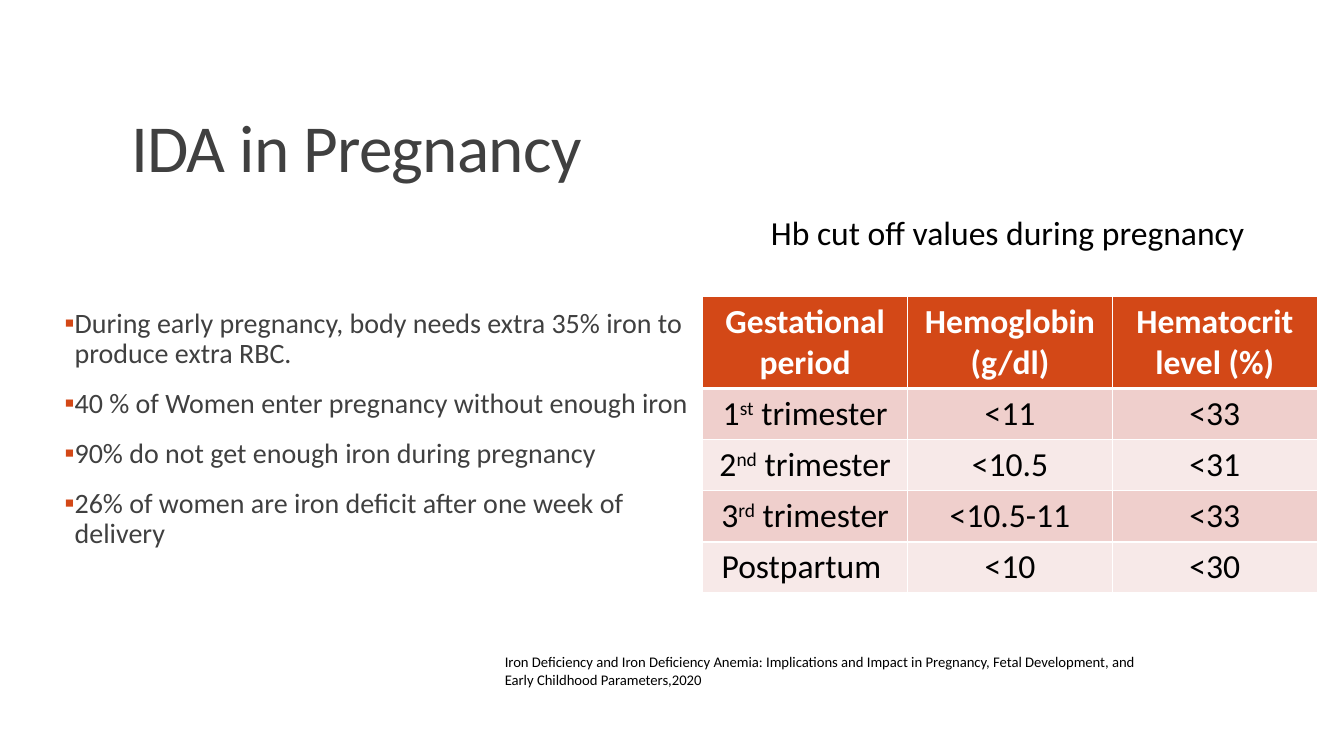
"""Build the slide on iron deficiency anemia in pregnancy."""
import pptx
import pptx.dml.color
import pptx.enum.text
import pptx.oxml.ns
import pptx.util
from dataclasses import dataclass
from lxml import etree

Pt = pptx.util.Pt
Align = pptx.enum.text.PP_ALIGN
Anchor = pptx.enum.text.MSO_ANCHOR
Fit = pptx.enum.text.MSO_AUTO_SIZE
qn = pptx.oxml.ns.qn


@dataclass(frozen=True)
class Theme:
    """Hold the colours, font and type sizes."""
    face: str = "Calibri"
    gray: str = "404040"
    black: str = "000000"
    white: str = "FFFFFF"
    rust: str = "D34817"
    rose: str = "EFCFCC"
    pale: str = "F7E9E8"
    title: float = 48
    table: float = 24
    list: float = 20
    note: float = 10.5


THEME = Theme()

POINTS = [
    "During early pregnancy, body needs extra 35% iron to produce extra RBC.",
    "40 % of Women enter pregnancy without enough iron",
    "90% do not get enough iron during pregnancy",
    "26% of women are iron deficit after one week of delivery",
]
HEAD = ["Gestational period", "Hemoglobin (g/dl)", "Hematocrit level (%)"]
LEVELS = [
    [("1", "st", " trimester"), "<11", "<33"],
    [("2", "nd", " trimester"), "<10.5", "<31"],
    [("3", "rd", " trimester"), "<10.5-11", "<33"],
    ["Postpartum ", "<10", "<30"],
]
SOURCE = ("Iron Deficiency and Iron Deficiency Anemia: Implications and Impact "
          "in Pregnancy, Fetal Development, and Early Childhood Parameters,2020")


def style(item, **vals):
    """Set each format value on the item."""
    for name, val in vals.items():
        setattr(item, name, val)


def place(shape, left, top, width, height):
    """Move and size a shape in points."""
    style(shape, left=Pt(left), top=Pt(top), width=Pt(width), height=Pt(height))


def write(para, text, size, color, bold=False):
    """Add a run of text to a paragraph and return it."""
    run = para.add_run()
    run.text = text
    style(run.font, name=THEME.face, size=Pt(size), bold=bold)
    run.font.color.rgb = pptx.dml.color.RGBColor.from_string(color)
    return run


def paint(parent, color):
    """Add a solid fill element to an XML parent."""
    fill = etree.SubElement(parent, qn("a:solidFill"))
    etree.SubElement(fill, qn("a:srgbClr"), val=color)


def bullet(para):
    """Give a paragraph a small square bullet and a hanging indent."""
    props = para._p.get_or_add_pPr()
    style(props, marL=Pt(7.2), indent=Pt(-7.2))
    props.set("marL", str(Pt(7.2)))
    props.set("indent", str(Pt(-7.2)))
    tint = etree.SubElement(props, qn("a:buClr"))
    etree.SubElement(tint, qn("a:srgbClr"), val=THEME.rust)
    etree.SubElement(props, qn("a:buFont"), typeface=THEME.face)
    etree.SubElement(props, qn("a:buChar"), char="▪")


def add_title(slide, text):
    """Fill the title placeholder."""
    shape = slide.shapes.title
    place(shape, 86.4, 22.3, 792, 114.5)
    style(shape.text_frame, vertical_anchor=Anchor.BOTTOM, auto_size=Fit.NONE)
    para = shape.text_frame.paragraphs[0]
    style(para, alignment=Align.LEFT, line_spacing=0.85)
    run = write(para, text, THEME.title, THEME.gray)
    run._r.get_or_add_rPr().set("spc", "-50")


def add_list(slide, lines):
    """Fill the body placeholder with bulleted lines."""
    shape = slide.placeholders[1]
    place(shape, 46.1, 217.4, 455.8, 185.8)
    frame = shape.text_frame
    style(frame, margin_left=0, margin_right=0, auto_size=Fit.NONE,
          vertical_anchor=Anchor.TOP)
    for i, line in enumerate(lines):
        para = frame.add_paragraph() if i else frame.paragraphs[0]
        bullet(para)
        style(para, line_spacing=0.9, space_before=Pt(12 if i else 0),
              space_after=Pt(2))
        write(para, line, THEME.list, THEME.gray)


def add_note(slide, text, size, *box):
    """Add a plain text box."""
    shape = slide.shapes.add_textbox(0, 0, 0, 0)
    place(shape, *box)
    style(shape.text_frame, word_wrap=True, auto_size=Fit.SHAPE_TO_FIT_TEXT)
    write(shape.text_frame.paragraphs[0], text, size, THEME.black)


def fill_cell(cell, text, fill, color, head):
    """Write, border and fill one table cell."""
    para = cell.text_frame.paragraphs[0]
    para.alignment = Align.CENTER
    parts = [text] if isinstance(text, str) else text
    for i, part in enumerate(parts):
        run = write(para, part, THEME.table, color, head)
        if i == 1:
            run._r.get_or_add_rPr().set("baseline", "30000")
    props = cell._tc.get_or_add_tcPr()
    for side in "LRTB":
        width = 3 if head and side == "B" else 1
        edge = etree.SubElement(props, qn("a:ln" + side), w=str(Pt(width)))
        paint(edge, THEME.white)
    paint(props, fill)


def add_grid(slide, rows):
    """Add the table of cut-off values, with banded rows."""
    box = [Pt(n) for n in (502, 211.8, 438.9, 211.8)]
    grid = slide.shapes.add_table(len(rows), len(rows[0]), *box).table
    for col in grid.columns:
        col.width = Pt(146.3)
    for i, row in enumerate(rows):
        head = i == 0
        grid.rows[i].height = Pt(65.8 if head else 36.5)
        band = THEME.rose if i % 2 else THEME.pale
        fill = THEME.rust if head else band
        color = THEME.white if head else THEME.black
        for j, text in enumerate(row):
            fill_cell(grid.cell(i, j), text, fill, color, head)


def main():
    """Build and save the slide."""
    deck = pptx.Presentation()
    style(deck, slide_width=Pt(960), slide_height=Pt(540))
    slide = deck.slides.add_slide(deck.slide_layouts[1])
    add_title(slide, "IDA in Pregnancy")
    add_list(slide, POINTS)
    add_grid(slide, [HEAD] + LEVELS)
    add_note(slide, "Hb cut off values during pregnancy", THEME.table,
             543.6, 147.6, 378.7, 36)
    add_note(slide, SOURCE, THEME.note, 353.5, 463, 480.2, 32.4)
    deck.save("out.pptx")


if __name__ == "__main__":
    main()
